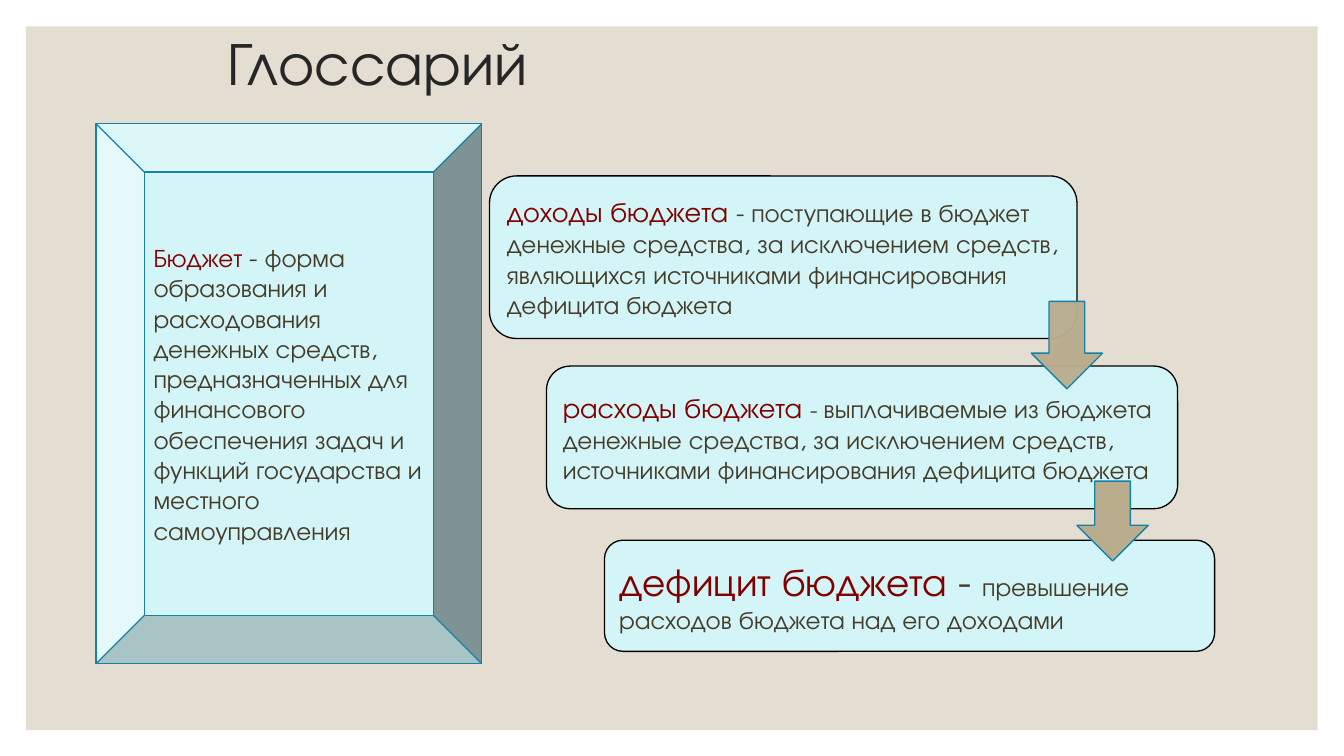
from lxml import etree
from pptx import Presentation
from pptx import util as u
from pptx.dml.color import RGBColor
from pptx.enum import shapes, text
from pptx.oxml.ns import qn

FONT = "TeX Gyre Adventor"
COLORS = {
    "panel": "E3DED1",
    "title": "262626",
    "card": "D4F5F7",
    "term": "800000",
    "body": "443C29",
    "teal": "1580A9",
    "black": "000000",
    "arrow": "BAAD8D",
}
BODY_SIZE = 19.1

# Term cards: box, then runs of (text, size, colour)
CARDS = [
    ((370.8, 133.2, 445, 123.1), [
        ("доходы бюджета ", 21.2, "term"),
        ("- поступающие в бюджет денежные средства, за исключением средств, "
         "являющихся источниками финансирования дефицита бюджета", BODY_SIZE, "body"),
    ]),
    ((414, 277.2, 478.1, 108), [
        ("расходы бюджета ", 21.2, "term"),
        ("- ", 17, "body"),
        ("выплачиваемые из бюджета денежные средства, за исключением средств, "
         "источниками финансирования дефицита бюджета", BODY_SIZE, "body"),
    ]),
    ((457.9, 409, 462.2, 84.2), [
        ("дефицит бюджета ", 29.7, "term"),
        ("- ", 29.7, "body"),
        ("превышение расходов бюджета над его доходами", BODY_SIZE, "body"),
    ]),
]


def rgb(name):
    return RGBColor.from_string(COLORS[name])


def add_text(sp, runs, spacing=None):
    tf = sp.text_frame
    tf.word_wrap = True
    tf.vertical_anchor = text.MSO_ANCHOR.MIDDLE
    p = tf.paragraphs[0]
    p.alignment = text.PP_ALIGN.LEFT
    if spacing:
        p.line_spacing = spacing
    for words, size, color in runs:
        r = p.add_run()
        r.text = words
        r.font.name = FONT
        r.font.size = u.Pt(size)
        r.font.color.rgb = rgb(color)


def add_box(s, kind, box, fill, line=None):
    sp = s.shapes.add_shape(kind, *(u.Pt(v) for v in box))
    sp.shadow.inherit = False
    sp.fill.solid()
    sp.fill.fore_color.rgb = rgb(fill)
    if line:
        sp.line.color.rgb = rgb(line)
        sp.line.width = u.Pt(1)
    else:
        sp.line.fill.background()
    return sp


def add_arrow(s, box, opacity=100):
    sp = add_box(s, shapes.MSO_SHAPE.DOWN_ARROW, box, "arrow", "teal")
    if opacity < 100:
        color = sp._element.spPr.find(qn("a:solidFill"))[0]
        etree.SubElement(color, qn("a:alpha")).set("val", str(opacity * 1000))


def main():
    prs = Presentation()
    prs.slide_width, prs.slide_height = u.Pt(1018.08), u.Pt(572.4)
    s = prs.slides.add_slide(prs.slide_layouts[6])

    # Background panel and title
    add_box(s, shapes.MSO_SHAPE.RECTANGLE, (19.6, 20, 978.5, 532.8), "panel")
    title = s.shapes.add_textbox(*(u.Pt(v) for v in (165.6, 23, 686.9, 53.3)))
    add_text(title, [("Глоссарий", 45.8, "title")], spacing=0.9)

    # Main definition
    frame = add_box(s, shapes.MSO_SHAPE.BEVEL, (72.7, 93.6, 292.3, 409), "card", "teal")
    add_text(frame, [
        ("Бюджет ", BODY_SIZE, "term"),
        ("- форма образования и расходования денежных средств, предназначенных "
         "для финансового обеспечения задач и функций государства и местного "
         "самоуправления", BODY_SIZE, "body"),
    ])

    # Cascade of terms
    for box, runs in CARDS:
        card = add_box(s, shapes.MSO_SHAPE.ROUNDED_RECTANGLE, box, "card", "black")
        add_text(card, runs)

    # Arrows between the cards
    add_arrow(s, (781.2, 228.2, 54, 66.2), opacity=97)
    add_arrow(s, (815.8, 364.3, 54, 60.5))

    prs.save("out.pptx")


if __name__ == "__main__":
    main()
